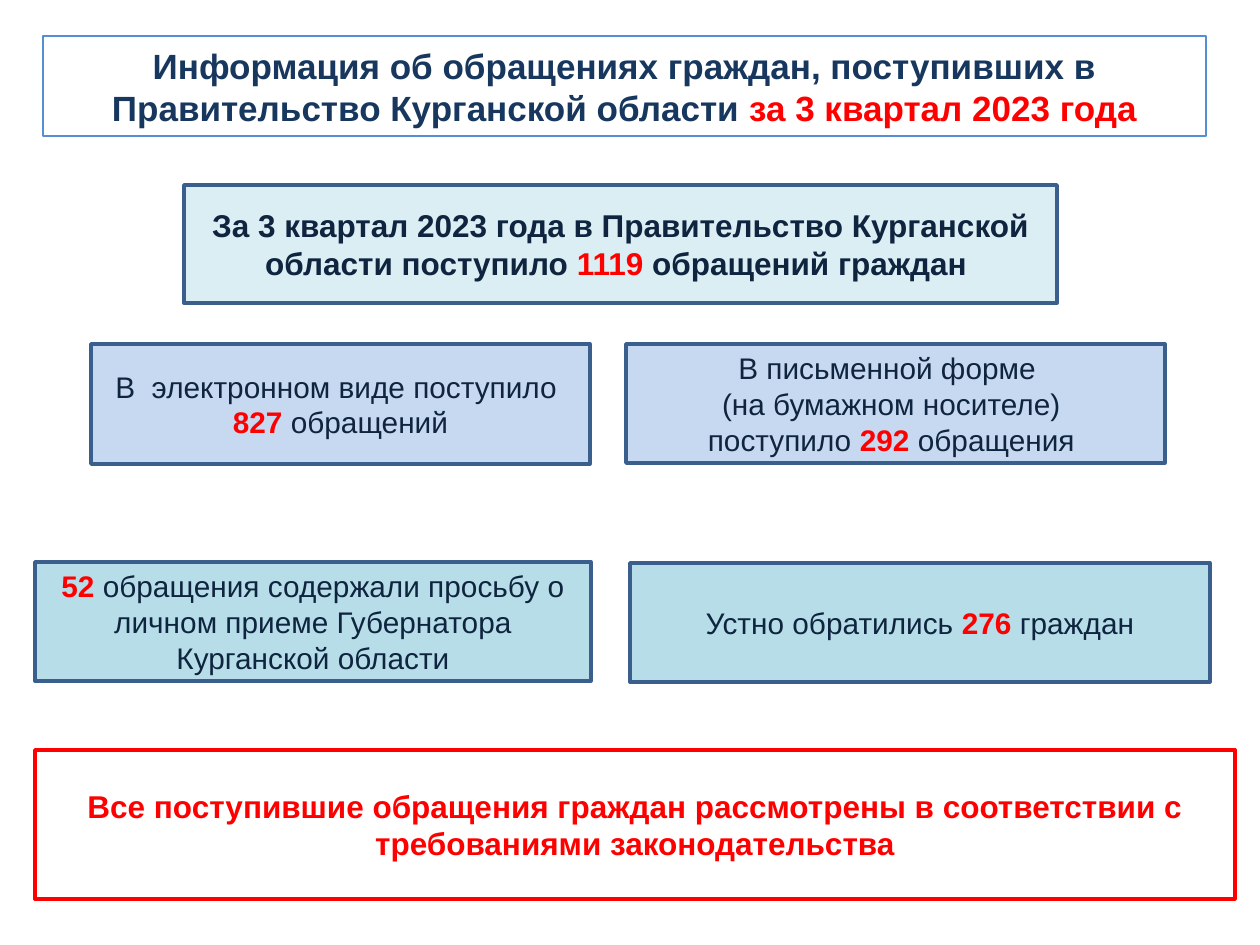
from pptx import Presentation
from pptx.dml.color import RGBColor
from pptx.enum.shapes import MSO_SHAPE
from pptx.enum.text import MSO_ANCHOR, MSO_AUTO_SIZE, PP_ALIGN
from pptx.util import Emu, Inches, Pt

NAVY = RGBColor(0x17, 0x37, 0x5E)
INK = RGBColor(0x0F, 0x24, 0x3E)
RED = RGBColor(0xFF, 0x00, 0x00)
TITLE_BORDER = RGBColor(0x55, 0x8E, 0xD5)
BOX_BORDER = RGBColor(0x3A, 0x5F, 0x8C)
PALE_AQUA = RGBColor(0xDB, 0xEE, 0xF4)
PALE_BLUE = RGBColor(0xC6, 0xD9, 0xF1)
AQUA = RGBColor(0xB7, 0xDE, 0xE8)


class SlideBuilder:
    FONT = "Arial"
    SCALE = Inches(1) / 126

    def __init__(self, slide):
        self.slide = slide

    def emu(self, px):
        return Emu(round(px * self.SCALE))

    def outline(self, shape, color, width):
        shape.line.color.rgb = color
        shape.line.width = Pt(width)

    def fill_text(self, shape, lines, size, color, bold):
        frame = shape.text_frame
        frame.word_wrap = True
        frame.auto_size = MSO_AUTO_SIZE.NONE
        frame.vertical_anchor = MSO_ANCHOR.MIDDLE
        for index, line in enumerate(lines):
            paragraph = frame.add_paragraph() if index else frame.paragraphs[0]
            paragraph.alignment = PP_ALIGN.CENTER
            paragraph.font.name = self.FONT
            paragraph.font.size = Pt(size)
            for position, text in enumerate(line.split("|")):
                if not text:
                    continue
                highlighted = position % 2 == 1
                run = paragraph.add_run()
                run.text = text
                run.font.bold = bold or highlighted
                run.font.color.rgb = RED if highlighted else color

    def title(self, bounds, text):
        shape = self.slide.shapes.title
        shape.left, shape.top, shape.width, shape.height = map(self.emu, bounds)
        self.outline(shape, TITLE_BORDER, 0.75)
        self.fill_text(shape, [text], 20, NAVY, True)

    def box(self, bounds, lines, fill=None, border=BOX_BORDER, size=17, color=INK, bold=False):
        shape = self.slide.shapes.add_shape(MSO_SHAPE.RECTANGLE, *map(self.emu, bounds))
        shape.shadow.inherit = False
        if fill is None:
            shape.fill.background()
        else:
            shape.fill.solid()
            shape.fill.fore_color.rgb = fill
        self.outline(shape, border, 2)
        self.fill_text(shape, lines, size, color, bold)


def main():
    presentation = Presentation()
    presentation.slide_width = Inches(10)
    presentation.slide_height = Inches(7.5)
    builder = SlideBuilder(presentation.slides.add_slide(presentation.slide_layouts[5]))

    builder.title(
        (43, 36, 1163, 100),
        "Информация об обращениях граждан, поступивших в Правительство "
        "Курганской области |за 3 квартал 2023 года",
    )
    builder.box(
        (184, 185, 873, 118),
        ["За 3 квартал 2023 года в Правительство Курганской области поступило "
         "|1119| обращений граждан "],
        fill=PALE_AQUA, size=18, bold=True,
    )

    categories = [
        ((91, 344, 499, 120), PALE_BLUE, ["В  электронном виде поступило  |827| обращений"]),
        ((626, 344, 539, 119), PALE_BLUE,
         ["В письменной форме  ", "(на бумажном носителе) ", "поступило |292 |обращения "]),
        ((35, 562, 556, 119), AQUA,
         ["|52 |обращения содержали просьбу о личном приеме Губернатора Курганской области"]),
        ((630, 563, 580, 119), AQUA, ["Устно обратились |276 |граждан"]),
    ]
    for bounds, fill, lines in categories:
        builder.box(bounds, lines, fill=fill)

    builder.box(
        (35, 750, 1200, 149),
        ["Все поступившие обращения граждан рассмотрены в соответствии с "
         "требованиями законодательства"],
        border=RED, size=18, color=RED, bold=True,
    )
    presentation.save("out.pptx")


if __name__ == "__main__":
    main()
